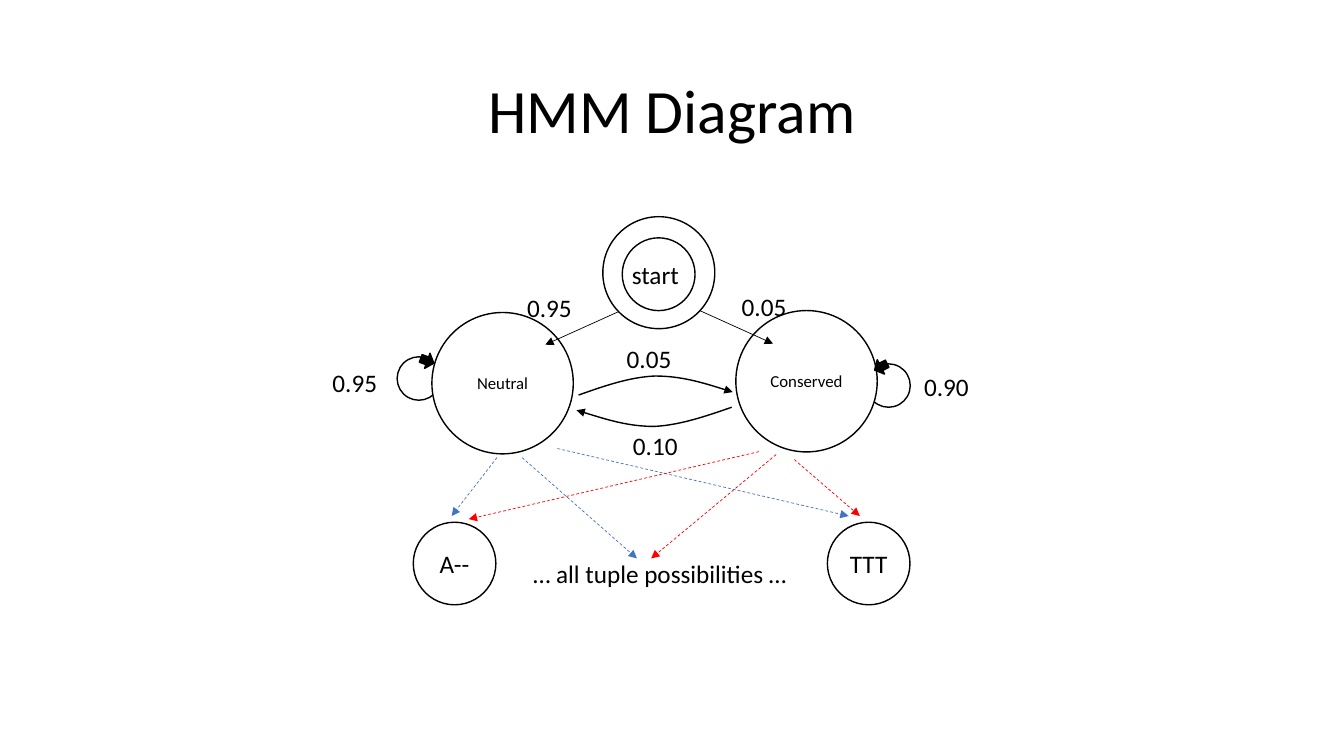
from lxml import etree
from pptx import Presentation
from pptx.dml.color import RGBColor
from pptx.enum.dml import MSO_LINE
from pptx.enum.shapes import MSO_CONNECTOR, MSO_SHAPE
from pptx.enum.text import MSO_ANCHOR, MSO_AUTO_SIZE, PP_ALIGN
from pptx.oxml.ns import qn
from pptx.util import Pt

BLACK = RGBColor(0x00, 0x00, 0x00)
WHITE = RGBColor(0xFF, 0xFF, 0xFF)
BLUE = RGBColor(0x44, 0x72, 0xC4)
RED = RGBColor(0xFF, 0x00, 0x00)
OVAL, ARROW = MSO_SHAPE.OVAL, MSO_SHAPE.RIGHT_ARROW
STRAIGHT, DASH = MSO_CONNECTOR.STRAIGHT, MSO_LINE.DASH
CENTER, LEFT = PP_ALIGN.CENTER, PP_ALIGN.LEFT
MIDDLE, TOP = MSO_ANCHOR.MIDDLE, MSO_ANCHOR.TOP
GROW = MSO_AUTO_SIZE.SHAPE_TO_FIT_TEXT


def write(sp, text, size, align=CENTER, **frame):
    tf = sp.text_frame
    for name, value in frame.items():
        setattr(tf, name, value)
    p = tf.paragraphs[0]
    p.alignment = align
    r = p.add_run()
    r.text = text
    for name, value in {"name": "Calibri", "size": Pt(size)}.items():
        setattr(r.font, name, value)
    r.font.color.rgb = BLACK
    return p


def outline(sp, color, width):
    sp.line.color.rgb = color
    sp.line.width = Pt(width)


prs = Presentation()
prs.slide_width, prs.slide_height = Pt(960), Pt(540)
s = prs.slides.add_slide(prs.slide_layouts[5])

title = s.shapes.title
for name, value in {"left": 66, "top": 28.8, "width": 828, "height": 104.4}.items():
    setattr(title, name, Pt(value))
write(title, "HMM Diagram", 44, vertical_anchor=MIDDLE).line_spacing = 0.9

circles = [
    (619.2, 259.9, 31, "", 12),
    (283.7, 254.9, 31, "", 12),
    (430.6, 154.8, 80, "", 12),
    (444.5, 169.9, 52, "", 12),
    (308.5, 223.2, 101, "Neutral", 12),
    (525.6, 221.8, 101, "Conserved", 12),
    (295.2, 373, 59, "A--", 18),
    (591, 373, 59, "TTT", 18),
]
for x, y, size, text, points in circles:
    sp = s.shapes.add_shape(OVAL, Pt(x), Pt(y), Pt(size), Pt(size))
    sp.shadow.inherit = False
    sp.fill.solid()
    sp.fill.fore_color.rgb = WHITE
    outline(sp, BLACK, 1)
    if text:
        write(sp, text, points, vertical_anchor=MIDDLE, word_wrap=False)

arrows = []
links = [
    (442.1, 222.5, 389.5, 246.2, BLACK),
    (499.7, 221.8, 552.2, 245.5, BLACK),
    (355, 326.9, 322.6, 368.6, BLUE),
    (398.2, 320.4, 606.2, 368.6, BLUE),
    (373, 326.9, 455, 398.9, BLUE),
    (542.2, 322.6, 334.8, 370.8, RED),
    (567.4, 328.3, 614.2, 368.6, RED),
    (554.4, 324.7, 465.1, 398.9, RED),
]
for x1, y1, x2, y2, color in links:
    sp = s.shapes.add_connector(STRAIGHT, Pt(x1), Pt(y1), Pt(x2), Pt(y2))
    etree.SubElement(sp._element.spPr, qn("a:effectLst"))
    outline(sp, color, 0.5)
    if color != BLACK:
        sp.line.dash_style = DASH
    arrows.append(sp)

curves = [
    [(413.3, 282.2), (431.3, 275.8), (450, 269.3), (468, 268.6),
     (486.7, 268.6), (505.4, 274.3), (523.4, 280.1)],
    [(522.7, 290.9), (504, 297.4), (485.3, 303.8), (467.3, 304.6),
     (448.6, 304.6), (430.6, 298.8), (411.8, 293)],
]
for curve in curves:
    start, *rest = [(Pt(x), Pt(y)) for x, y in curve]
    builder = s.shapes.build_freeform(*start)
    builder.add_line_segments(rest, close=False)
    sp = builder.convert_to_shape()
    trace = sp._element.find(".//" + qn("a:path"))
    segments = trace.findall(qn("a:lnTo"))
    for i in range(0, len(segments), 3):
        bezier = etree.SubElement(trace, qn("a:cubicBezTo"))
        for segment in segments[i:i + 3]:
            bezier.append(segment[0])
            trace.remove(segment)
    sp.shadow.inherit = False
    sp.fill.background()
    outline(sp, BLACK, 1)
    arrows.append(sp)

for sp in arrows:
    etree.SubElement(sp.line._get_or_add_ln(), qn("a:tailEnd"), type="triangle")

for x, y, angle in [(300.2, 252, 20), (624.2, 256.3, 153.2)]:
    sp = s.shapes.add_shape(ARROW, Pt(x), Pt(y), Pt(10), Pt(11.5))
    sp.rotation = angle
    sp.shadow.inherit = False
    sp.fill.solid()
    sp.fill.fore_color.rgb = BLACK
    outline(sp, BLACK, 1)

labels = [
    (444.2, 181.4, 68, "start"),
    (369.4, 205.2, 59, "0.95"),
    (522.7, 204.5, 59, "0.05"),
    (445, 303.8, 59, "0.10"),
    (440.6, 241.9, 59, "0.05"),
    (230.4, 258.5, 59, "0.95"),
    (653, 261.4, 59, "0.90"),
    (373.7, 395.3, 201, "… all tuple possibilities …"),
]
for x, y, width, text in labels:
    sp = s.shapes.add_textbox(Pt(x), Pt(y), Pt(width), Pt(29))
    write(sp, text, 18, LEFT, vertical_anchor=TOP, word_wrap=True, auto_size=GROW)

prs.save("out.pptx")
